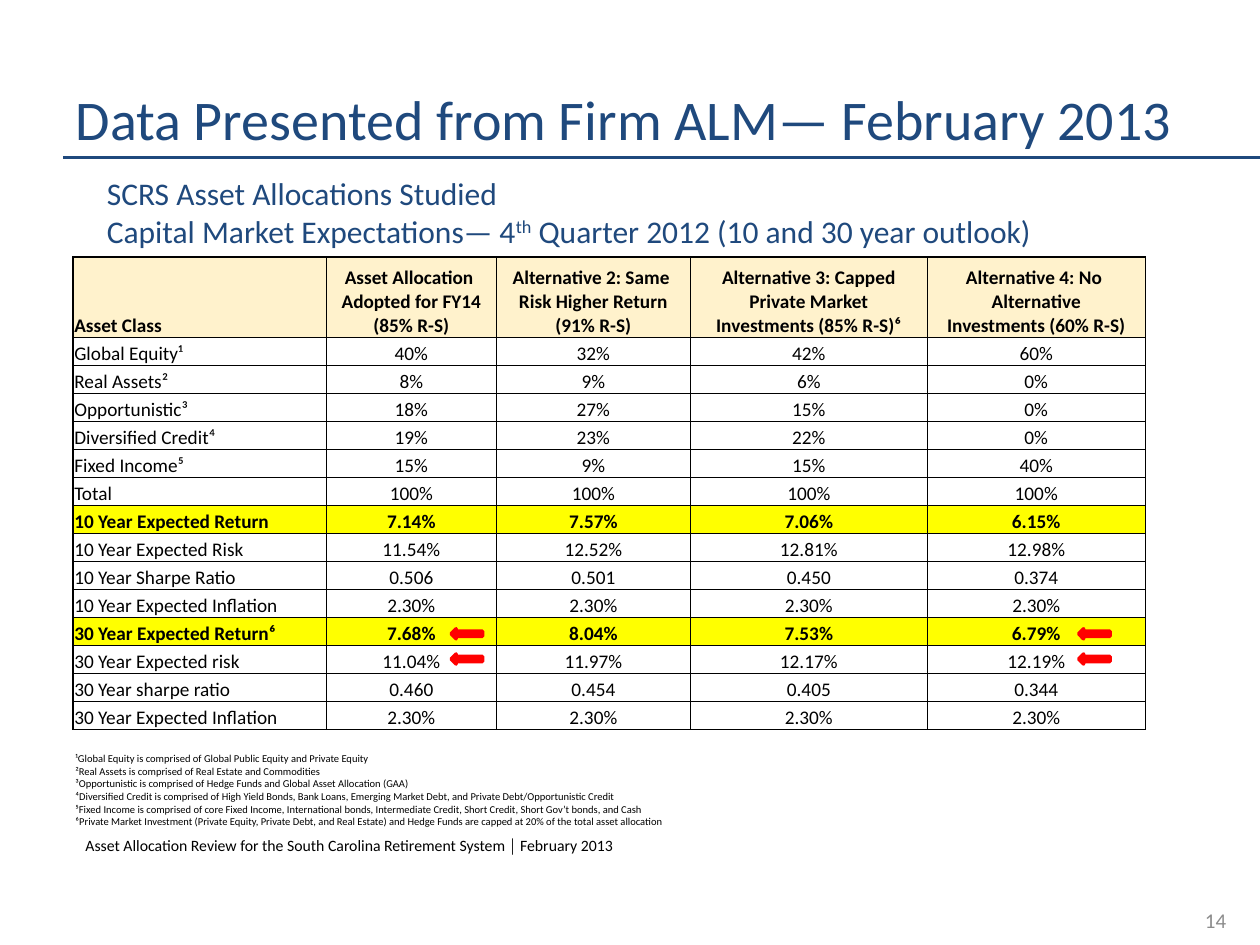
from typing import NamedTuple

from lxml import etree
from pptx import Presentation
from pptx.dml.color import RGBColor
from pptx.enum import shapes, text
from pptx.oxml import ns
from pptx.util import Inches, Pt

NAVY = RGBColor(0x1F, 0x49, 0x7D)
BLACK = RGBColor(0, 0, 0)
GRAY = RGBColor(0x8C, 0x8C, 0x8C)
CREAM = RGBColor(0xFF, 0xF2, 0xCC)
YELLOW = RGBColor(0xFF, 0xFF, 0)
RED = RGBColor(0xFF, 0, 0)
FACE = "Calibri"
LEFT, CENTER, RIGHT = text.PP_ALIGN.LEFT, text.PP_ALIGN.CENTER, text.PP_ALIGN.RIGHT


class Row(NamedTuple):
    cells: list[str]
    fill: RGBColor | None = None


class Note(NamedTuple):
    box: tuple[float, float, float, float]
    lines: list[str]
    size: float
    color: RGBColor = BLACK
    align: text.PP_ALIGN = LEFT
    anchor: text.MSO_ANCHOR = text.MSO_ANCHOR.TOP


ROWS = [
    Row(["Asset Class",
         "Asset Allocation \nAdopted for FY14 (85% R-S)",
         "Alternative 2: Same \nRisk Higher Return (91% R-S)",
         "Alternative 3: Capped\nPrivate Market\nInvestments (85% R-S)⁶",
         "Alternative 4: No \nAlternative\nInvestments (60% R-S)"], CREAM),
    Row(["Global Equity¹", "40%", "32%", "42%", "60%"]),
    Row(["Real Assets²", "8%", "9%", "6%", "0%"]),
    Row(["Opportunistic³", "18%", "27%", "15%", "0%"]),
    Row(["Diversified Credit⁴", "19%", "23%", "22%", "0%"]),
    Row(["Fixed Income⁵", "15%", "9%", "15%", "40%"]),
    Row(["Total"] + ["100%"] * 4),
    Row(["10 Year Expected Return", "7.14%", "7.57%", "7.06%", "6.15%"], YELLOW),
    Row(["10 Year Expected Risk", "11.54%", "12.52%", "12.81%", "12.98%"]),
    Row(["10 Year Sharpe Ratio", "0.506", "0.501", "0.450", "0.374"]),
    Row(["10 Year Expected Inflation"] + ["2.30%"] * 4),
    Row(["30 Year Expected Return⁶", "7.68%", "8.04%", "7.53%", "6.79%"], YELLOW),
    Row(["30 Year Expected risk", "11.04%", "11.97%", "12.17%", "12.19%"]),
    Row(["30 Year sharpe ratio", "0.460", "0.454", "0.405", "0.344"]),
    Row(["30 Year Expected Inflation"] + ["2.30%"] * 4),
]
WIDTHS = [2.01, 1.35, 1.54, 1.88, 1.73]
TABLE_HIGH, HEAD_HIGH = 3.75, 0.64

HEADING = Note((0.75, 1.33, 8.33, 0.71), [
    "SCRS Asset Allocations Studied",
    "Capital Market Expectations— 4^th^ Quarter 2012 (10 and 30 year outlook)",
], 18, NAVY)
FOOTNOTES = Note((0.5, 5.92, 9.25, 0.71), [
    "¹Global Equity is comprised of Global Public Equity and Private Equity",
    "²Real Assets is comprised of Real Estate and Commodities",
    "³Opportunistic is comprised of Hedge Funds and Global Asset Allocation (GAA)",
    "⁴Diversified Credit is comprised of High Yield Bonds, Bank Loans, "
    "Emerging Market Debt, and Private Debt/Opportunistic Credit",
    "⁵Fixed Income is comprised of core Fixed Income, International bonds, "
    "Intermediate Credit, Short Credit, Short Gov’t bonds, and Cash",
    "⁶Private Market Investment (Private Equity, Private Debt, and Real Estate) "
    "and Hedge Funds are capped at 20% of the total asset allocation",
], 6)
SOURCE = Note((0.58, 6.58, 5.83, 0.25), [
    "Asset Allocation Review for the South Carolina Retirement System │ February 2013",
], 9)
NUMBER = Note((7.5, 7.1, 2.33, 0.4), ["14"], 12, GRAY, RIGHT, text.MSO_ANCHOR.MIDDLE)


def style(para, size: float, color: RGBColor, align=LEFT, bold: bool = False) -> None:
    para.alignment = align
    font = para.font
    font.name, font.size, font.bold = FACE, Pt(size), bold
    font.color.rgb = color


def add_note(slide, note: Note) -> None:
    """Add a text box; text between carets is raised."""
    frame = slide.shapes.add_textbox(*map(Inches, note.box)).text_frame
    frame.word_wrap = True
    frame.vertical_anchor = note.anchor
    for i, line in enumerate(note.lines):
        para = frame.add_paragraph() if i else frame.paragraphs[0]
        for j, part in enumerate(line.split("^")):
            run = para.add_run()
            run.text = part
            if j % 2:
                run._r.get_or_add_rPr().set("baseline", "30000")
        style(para, note.size, note.color, note.align)


def set_border(cell, widths: dict[str, float]) -> None:
    props = cell._tc.get_or_add_tcPr()
    for i, (side, width) in enumerate(widths.items()):
        line = etree.Element(ns.qn(f"a:ln{side}"), w=str(Pt(width)))
        fill = etree.SubElement(line, ns.qn("a:solidFill"))
        etree.SubElement(fill, ns.qn("a:srgbClr"), val=str(BLACK))
        props.insert(i, line)


def add_grid(slide, rows: list[Row]) -> None:
    last_row, last_col = len(rows) - 1, len(WIDTHS) - 1
    table = slide.shapes.add_table(
        len(rows), len(WIDTHS), Inches(0.58), Inches(2.04),
        Inches(sum(WIDTHS)), Inches(TABLE_HIGH)).table
    table.first_row = table.horz_banding = False
    for col, width in zip(table.columns, WIDTHS):
        col.width = Inches(width)
    for r, row in enumerate(rows):
        table.rows[r].height = Inches((TABLE_HIGH - HEAD_HIGH) / last_row if r else HEAD_HIGH)
        for c, words in enumerate(row.cells):
            cell = table.cell(r, c)
            cell.margin_left = cell.margin_right = cell.margin_top = Inches(0.01)
            cell.margin_bottom = 0
            cell.vertical_anchor = text.MSO_ANCHOR.BOTTOM
            para = cell.text_frame.paragraphs[0]
            para.text = words
            style(para, 11, BLACK, CENTER if c else LEFT, row.fill is not None)
            if row.fill is None:
                cell.fill.background()
            else:
                cell.fill.solid()
                cell.fill.fore_color.rgb = row.fill
            set_border(cell, {
                "L": 0.5 if c else 1,
                "R": 1 if c == last_col else 0.5,
                "T": 0.5 if r else 1,
                "B": 1 if r == last_row else 0.5,
            })


def add_arrow(slide, left: float, top: float) -> None:
    arrow = slide.shapes.add_shape(
        shapes.MSO_SHAPE.LEFT_ARROW, Inches(left), Inches(top), Inches(0.25), Inches(0.08))
    arrow.shadow.inherit = False
    arrow.fill.solid()
    arrow.fill.fore_color.rgb = RED
    arrow.line.color.rgb = RED
    arrow.line.width = Pt(2)


def add_rule(slide) -> None:
    rule = slide.shapes.add_connector(
        shapes.MSO_CONNECTOR.STRAIGHT, Inches(0.5), Inches(1.25), Inches(10), Inches(1.25))
    rule.line.color.rgb = NAVY
    rule.line.width = Pt(1.5)
    etree.SubElement(rule._element.spPr, ns.qn("a:effectLst"))


def add_title(slide, words: str) -> None:
    title = slide.shapes.title
    title.left, title.top, title.width, title.height = map(Inches, (0.5, 0.3, 9.5, 1.28))
    title.text_frame.vertical_anchor = text.MSO_ANCHOR.MIDDLE
    para = title.text_frame.paragraphs[0]
    para.text = words
    style(para, 32, NAVY)


def main() -> None:
    deck = Presentation()
    deck.slide_width, deck.slide_height = Inches(10), Inches(7.5)
    slide = deck.slides.add_slide(deck.slide_layouts.get_by_name("Title Only"))
    add_rule(slide)
    add_title(slide, "Data Presented from Firm ALM— February 2013")
    add_grid(slide, ROWS)
    for left in (3.58, 8.56):
        for top in (4.99, 5.19):
            add_arrow(slide, left, top)
    for note in (FOOTNOTES, SOURCE, HEADING, NUMBER):
        add_note(slide, note)
    deck.save("out.pptx")


if __name__ == "__main__":
    main()
